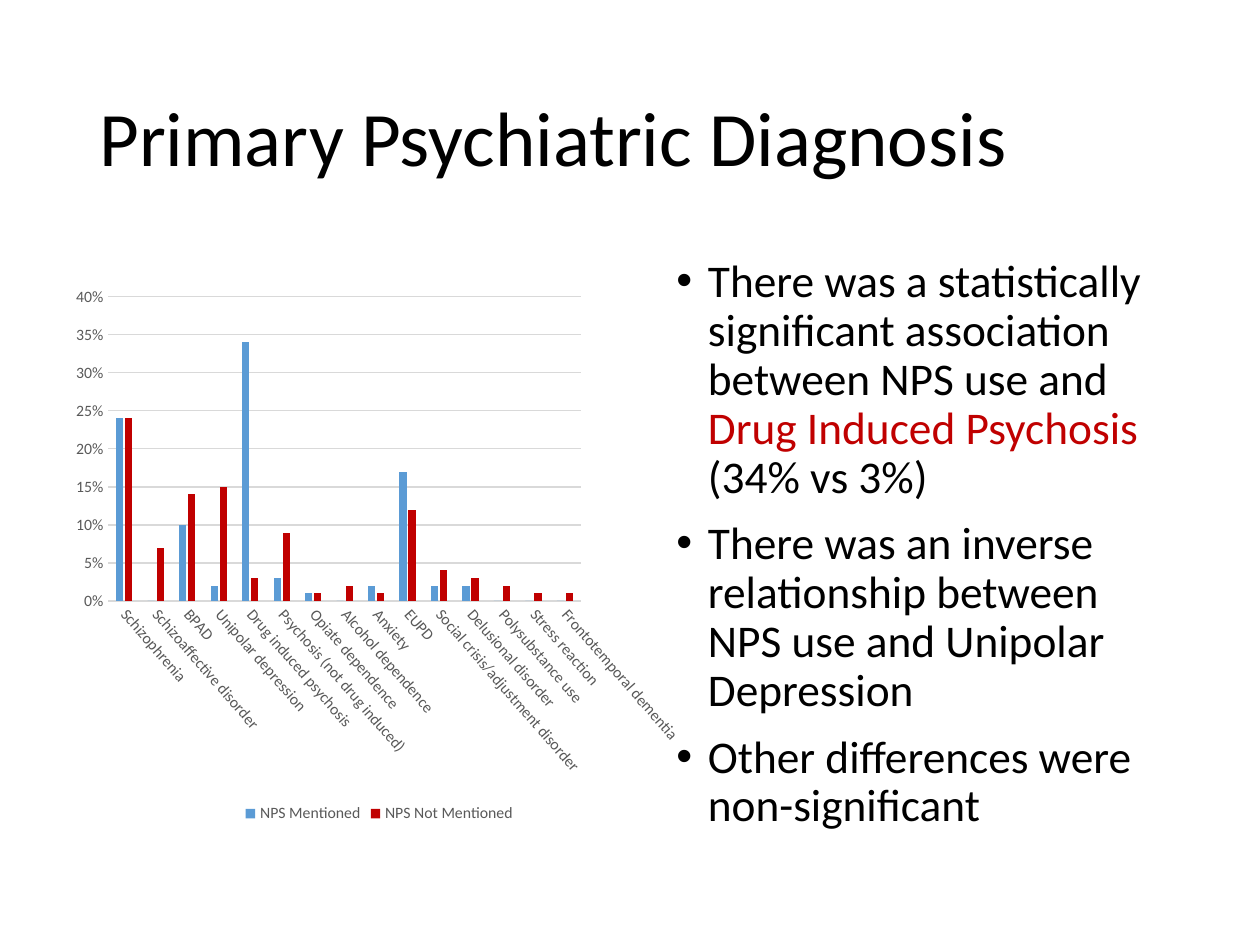
"""Build the slide on primary psychiatric diagnosis: a column chart beside three findings."""
from dataclasses import dataclass

from lxml.etree import SubElement
from pptx import Presentation
from pptx.chart.data import CategoryChartData
from pptx.dml.color import RGBColor
from pptx.enum.chart import XL_CHART_TYPE, XL_LEGEND_POSITION, XL_TICK_MARK
from pptx.enum.text import MSO_ANCHOR
from pptx.oxml import parse_xml
from pptx.oxml.ns import nsdecls, qn
from pptx.util import Inches, Pt


@dataclass(frozen=True)
class Theme:
    font: str = "Calibri"
    ink: str = "000000"
    accent: str = "C00000"
    blue: str = "5B9BD5"
    label: str = "595959"
    rule: str = "D9D9D9"
    title_size: float = 44
    body_size: float = 25.9
    label_size: float = 9
    rule_width: float = 0.75


theme = Theme()
presentation = Presentation()
presentation.slide_width, presentation.slide_height = Inches(10), Inches(7.5)
slide = presentation.slides.add_slide(presentation.slide_layouts[6])


def set_font(font, size, color):
    font.name, font.size = theme.font, Pt(size)
    font.color.rgb = RGBColor.from_string(color)


def add_text(box, paragraphs, size, anchor=MSO_ANCHOR.TOP, bullet=None, gap=0):
    """Add a text box whose paragraphs are lists of (text, colour) runs."""
    frame = slide.shapes.add_textbox(*map(Inches, box)).text_frame
    frame.word_wrap = True
    frame.vertical_anchor = anchor
    for index, runs in enumerate(paragraphs):
        paragraph = frame.paragraphs[0] if index == 0 else frame.add_paragraph()
        paragraph.line_spacing = 0.9
        paragraph.space_before = Pt(gap if index else 0)
        if bullet:
            properties = paragraph._p.get_or_add_pPr()
            properties.set("marL", str(Inches(0.25)))
            properties.set("indent", str(-Inches(0.25)))
            SubElement(properties, qn("a:buFont"), typeface="Arial")
            SubElement(properties, qn("a:buChar"), char=bullet)
        for text, color in runs:
            run = paragraph.add_run()
            run.text = text
            set_font(run.font, size, color)


add_text((0.69, 0.4, 8.62, 1.45), [[("Primary Psychiatric Diagnosis", theme.ink)]],
         size=theme.title_size, anchor=MSO_ANCHOR.MIDDLE)

findings = [
    [("There was a statistically significant association between NPS use and ", theme.ink),
     ("Drug Induced Psychosis ", theme.accent),
     ("(34% vs 3%)", theme.ink)],
    [("There was an inverse relationship between NPS use and Unipolar Depression", theme.ink)],
    [("Other differences were non-significant", theme.ink)],
]
add_text((5.27, 2, 4.05, 4.76), findings, size=theme.body_size, bullet="•", gap=10)

diagnoses = [
    ("Schizophrenia", 0.24, 0.24),
    ("Schizoaffective disorder", 0, 0.07),
    ("BPAD", 0.1, 0.14),
    ("Unipolar depression", 0.02, 0.15),
    ("Drug induced psychosis", 0.34, 0.03),
    ("Psychosis (not drug induced)", 0.03, 0.09),
    ("Opiate dependence", 0.01, 0.01),
    ("Alcohol dependence", 0, 0.02),
    ("Anxiety", 0.02, 0.01),
    ("EUPD", 0.17, 0.12),
    ("Social crisis/adjustment disorder", 0.02, 0.04),
    ("Delusional disorder", 0.02, 0.03),
    ("Polysubstance use", 0, 0.02),
    ("Stress reaction", 0, 0.01),
    ("Frontotemporal dementia", 0, 0.01),
]
names, mentioned, not_mentioned = zip(*diagnoses)
chart_data = CategoryChartData(number_format="0%")
chart_data.categories = names
chart_data.add_series("NPS Mentioned", mentioned)
chart_data.add_series("NPS Not Mentioned", not_mentioned)
chart = slide.shapes.add_chart(
    XL_CHART_TYPE.COLUMN_CLUSTERED, *map(Inches, (0.51, 2.18, 5, 4.39)), chart_data).chart
chart.has_title = False
set_font(chart.font, 10, theme.ink)

plot = chart.plots[0]
plot.vary_by_categories = False
plot.gap_width, plot.overlap = 219, -27
for series, color in zip(plot.series, (theme.blue, theme.accent)):
    series.format.fill.solid()
    series.format.fill.fore_color.rgb = RGBColor.from_string(color)

value_axis, category_axis = chart.value_axis, chart.category_axis
for axis in (value_axis, category_axis):
    axis.major_tick_mark = axis.minor_tick_mark = XL_TICK_MARK.NONE
    set_font(axis.tick_labels.font, theme.label_size, theme.label)
value_axis.minimum_scale, value_axis.maximum_scale, value_axis.major_unit = 0, 0.4, 0.05
value_axis.tick_labels.number_format = "0%"
value_axis.tick_labels.number_format_is_linked = False
value_axis.format.line.fill.background()
for line in (value_axis.major_gridlines.format.line, category_axis.format.line):
    line.color.rgb = RGBColor.from_string(theme.rule)
    line.width = Pt(theme.rule_width)
label_body = category_axis._element.find(qn("c:txPr")).find(qn("a:bodyPr"))
label_body.set("rot", str(49 * 60000))
label_body.set("vert", "horz")

chart.has_legend = True
chart.legend.position = XL_LEGEND_POSITION.BOTTOM
chart.legend.include_in_layout = False
set_font(chart.legend.font, theme.label_size, theme.label)

plot_area = chart._chartSpace.chart.plotArea
for layout in plot_area.findall(qn("c:layout")):
    plot_area.remove(layout)
shares = {"x": 0.07, "y": 0.04, "w": 0.75, "h": 0.55}
sides = "".join(f'<c:{side} val="{share}"/>' for side, share in shares.items())
plot_area.insert(0, parse_xml(
    f'<c:layout {nsdecls("c")}><c:manualLayout><c:layoutTarget val="inner"/>'
    f'<c:xMode val="edge"/><c:yMode val="edge"/>{sides}</c:manualLayout></c:layout>'))

presentation.save("out.pptx")
